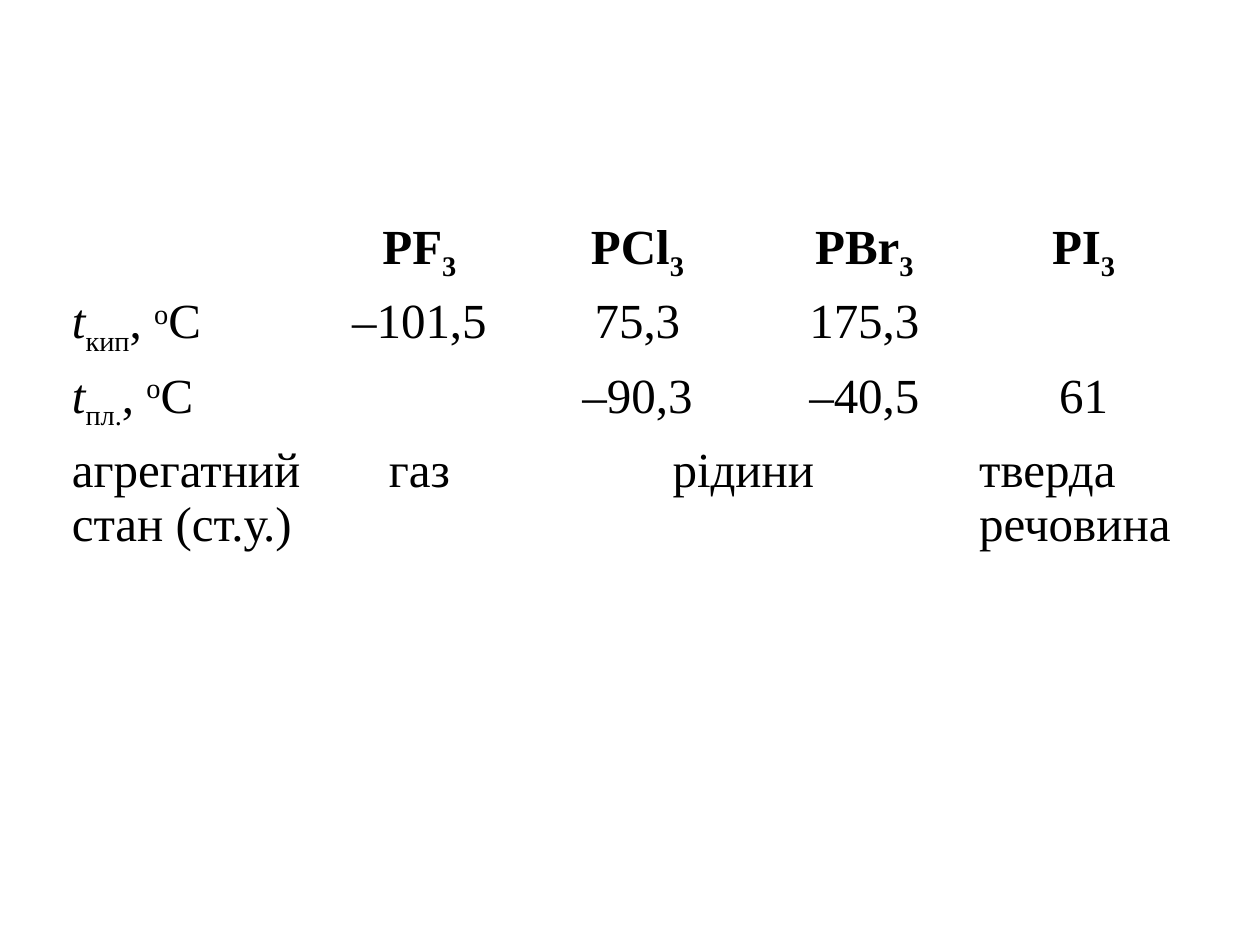
from dataclasses import dataclass

from lxml import etree
from pptx import Presentation
from pptx.dml.color import RGBColor
from pptx.enum import text
from pptx.oxml import ns
from pptx.util import Cm, Pt


@dataclass(frozen=True)
class Theme:
    font: str = "Times New Roman"
    size: int = 28
    ink: str = "000000"
    border: str = "FFFFFF"
    thin: int = 1
    thick: int = 3


THEME = Theme()
SUB, SUPER = -25000, 30000
CENTER, JUSTIFY = text.PP_ALIGN.CENTER, text.PP_ALIGN.JUSTIFY
COLUMN_WIDTHS = (5.23, 3.91, 4.88, 4.27, 4.57)
ROW_HEIGHTS = (1.5, 1.5, 1.5, 5.97)


def halide(symbol):
    return [(symbol, 0), ("3", SUB)]


def temperature(index):
    return [("t", 0), (index, SUB), (", ", 0), ("о", SUPER), ("С", 0)]


def plain(*values):
    return [[(value, 0)] if value else [] for value in values]


ROWS = (
    [[], *map(halide, ("PF", "PCl", "PBr", "PI"))],
    [temperature("кип"), *plain("–101,5", "75,3", "175,3", "")],
    [temperature("пл."), *plain("", "–90,3", "–40,5", "61")],
    plain("агрегатний стан (ст.у.)", "газ", "рідини", "", "тверда речовина"),
)


def set_borders(cell, is_header):
    properties = cell._tc.get_or_add_tcPr()
    for side in "LRTB":
        width = THEME.thick if is_header and side == "B" else THEME.thin
        border = etree.SubElement(properties, ns.qn(f"a:ln{side}"), w=str(Pt(width)))
        fill = etree.SubElement(border, ns.qn("a:solidFill"))
        etree.SubElement(fill, ns.qn("a:srgbClr"), val=THEME.border)


def write_cell(cell, pieces, alignment, is_header):
    cell.margin_left = cell.margin_right = Cm(0.18)
    cell.margin_top = cell.margin_bottom = 0
    paragraph = cell.text_frame.paragraphs[0]
    paragraph.alignment = alignment
    paragraph.font.name = THEME.font
    paragraph.font.size = Pt(THEME.size)
    paragraph.font.bold = is_header
    paragraph.font.color.rgb = RGBColor.from_string(THEME.ink)
    for words, baseline in pieces:
        run = paragraph.add_run()
        run.text = words
        if baseline:
            run._r.get_or_add_rPr().set("baseline", str(baseline))
        if words == "t":
            run.font.italic = True


def add_halide_table(slide):
    frame = slide.shapes.add_table(
        len(ROWS), len(COLUMN_WIDTHS), Cm(1.27), Cm(4.45),
        Cm(sum(COLUMN_WIDTHS)), Cm(sum(ROW_HEIGHTS)),
    )
    table = frame.table
    table.first_row = table.horz_banding = False
    for column, width in zip(table.columns, COLUMN_WIDTHS):
        column.width = Cm(width)
    for row, height in zip(table.rows, ROW_HEIGHTS):
        row.height = Cm(height)
    state_row = len(ROWS) - 1
    table.cell(state_row, 2).merge(table.cell(state_row, 3))
    for r, contents in enumerate(ROWS):
        for c, pieces in enumerate(contents):
            cell = table.cell(r, c)
            set_borders(cell, r == 0)
            cell.fill.background()
            is_label = c == 0 or (r, c) == (state_row, 4)
            if pieces:
                write_cell(cell, pieces, JUSTIFY if is_label else CENTER, r == 0)


def main():
    presentation = Presentation()
    presentation.slide_width, presentation.slide_height = Cm(25.4), Cm(19.05)
    slide = presentation.slides.add_slide(presentation.slide_layouts[6])
    add_halide_table(slide)
    presentation.save("out.pptx")


if __name__ == "__main__":
    main()
